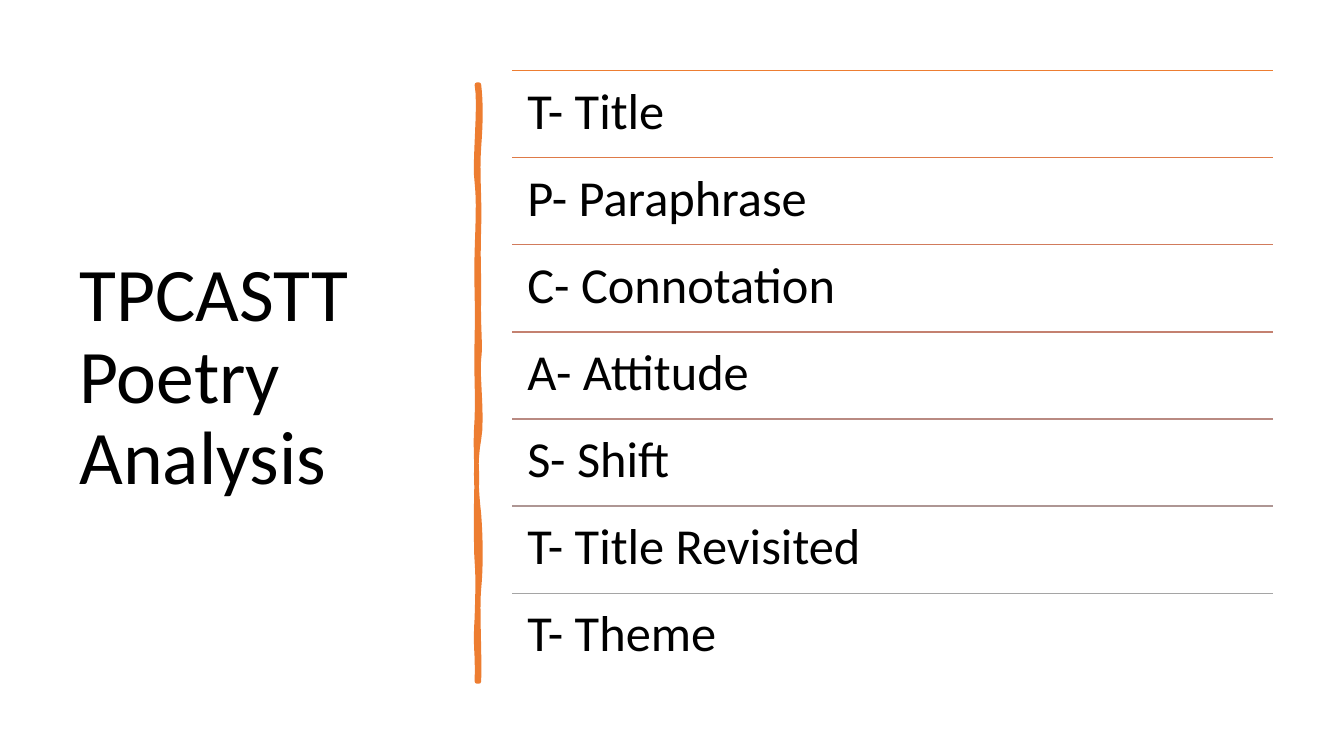
from pptx import Presentation
from pptx.dml.color import RGBColor
from pptx.enum.shapes import MSO_CONNECTOR
from pptx.enum.text import MSO_ANCHOR
from pptx.oxml.ns import qn
from pptx.util import Inches, Pt
from lxml.etree import SubElement

# Content
HEADING = "TPCASTT Poetry Analysis"
STEPS = [  # text, colour of the rule above it
    ("T- Title", "ED7D31"),
    ("P- Paraphrase", "DE7A47"),
    ("C- Connotation", "D17B5C"),
    ("A- Attitude", "C48170"),
    ("S- Shift", "B98A82"),
    ("T- Title Revisited", "AE9694"),
    ("T- Theme", "A5A5A5"),
]
FONT, INK, ORANGE = "Calibri", "000000", "ED7D31"

# Brush stroke edges: control x, y, control x, y, end y of each curve
BRUSH_TOP, BRUSH_RIGHT, BRUSH_LEFT = 0.84, 4.75, 4.73
RIGHT_EDGE = [
    (4.77, 1.02, 4.77, 1.19, 1.46), (4.73, 1.73, 4.76, 1.95, 2.26),
    (4.74, 2.57, 4.75, 2.62, 2.94), (4.74, 3.25, 4.77, 3.42, 3.56),
    (4.73, 3.70, 4.79, 4.14, 4.36), (4.71, 4.57, 4.72, 4.84, 5.10),
    (4.77, 5.36, 4.77, 5.64, 5.84), (4.73, 6.03, 4.76, 6.50, 6.76),
]
LEFT_EDGE = [
    (4.74, 6.46, 4.71, 6.44, 6.13), (4.74, 5.83, 4.74, 5.70, 5.57),
    (4.72, 5.44, 4.72, 4.95, 4.77), (4.73, 4.59, 4.71, 4.45, 4.15),
    (4.74, 3.86, 4.72, 3.73, 3.35), (4.74, 2.98, 4.72, 2.81, 2.50),
    (4.74, 2.18, 4.75, 2.00, 1.81), (4.70, 1.63, 4.77, 1.04, 0.84),
]
CURVE_STEPS = 8

# Grid
LIST_LEFT, LIST_TOP, LIST_WIDTH, LIST_HEIGHT = 5.08, 0.7, 7.55, 6.05
ROW_HEIGHT = LIST_HEIGHT / len(STEPS)


def color(value):
    return RGBColor.from_string(value)


def add_text(slide, text, box, size, inset, anchor):
    frame = slide.shapes.add_textbox(*map(Inches, box)).text_frame
    frame.word_wrap = True
    frame.vertical_anchor = anchor
    frame.margin_left = frame.margin_right = Inches(inset[0])
    frame.margin_top = frame.margin_bottom = Inches(inset[1])
    paragraph = frame.paragraphs[0]
    paragraph.text = text
    paragraph.line_spacing = 0.9
    paragraph.font.name = FONT
    paragraph.font.size = Pt(size)
    paragraph.font.color.rgb = color(INK)


def add_rule(slide, y, hue):
    rule = slide.shapes.add_connector(
        MSO_CONNECTOR.STRAIGHT, Inches(LIST_LEFT), Inches(y),
        Inches(LIST_LEFT + LIST_WIDTH), Inches(y))
    rule.line.color.rgb = color(hue)
    rule.line.width = Pt(1)
    SubElement(rule._element.spPr, qn("a:effectLst"))


def edge_points(x, y, curves):
    """Points along cubic curves that all start and end at the same x."""
    points = [(x, y)]
    for x1, y1, x2, y2, end in curves:
        for step in range(1, CURVE_STEPS + 1):
            t = step / CURVE_STEPS
            a, b, c, d = (1 - t)**3, 3 * t * (1 - t)**2, 3 * t**2 * (1 - t), t**3
            points.append((a * x + b * x1 + c * x2 + d * x,
                           a * y + b * y1 + c * y2 + d * end))
        y = end
    return points


def add_brush(slide):
    outline = (edge_points(BRUSH_RIGHT, BRUSH_TOP, RIGHT_EDGE)
               + edge_points(BRUSH_LEFT, RIGHT_EDGE[-1][-1], LEFT_EDGE))
    points = [(Inches(x), Inches(y)) for x, y in outline]
    builder = slide.shapes.build_freeform(*points[0])
    builder.add_line_segments(points[1:], close=True)
    brush = builder.convert_to_shape()
    brush.shadow.inherit = False
    brush.fill.solid()
    brush.fill.fore_color.rgb = color(ORANGE)
    brush.line.color.rgb = color(ORANGE)
    brush.line.width = Pt(3.25)
    SubElement(brush.line._get_or_add_ln(), qn("a:round"))


def main():
    deck = Presentation()
    deck.slide_width, deck.slide_height = Inches(13.33), Inches(7.5)
    slide = deck.slides.add_slide(deck.slide_layouts[6])

    # Heading and divider
    add_text(slide, HEADING, (0.69, 0.7, 3.74, 6.11), 54, (0.1, 0.05),
             MSO_ANCHOR.MIDDLE)
    add_brush(slide)

    # Steps with a rule above each
    for row, (step, hue) in enumerate(STEPS):
        top = LIST_TOP + row * ROW_HEIGHT
        add_rule(slide, top, hue)
        add_text(slide, step, (LIST_LEFT, top, LIST_WIDTH, ROW_HEIGHT), 36,
                 (0.15, 0.15), MSO_ANCHOR.TOP)

    deck.save("out.pptx")


if __name__ == "__main__":
    main()
